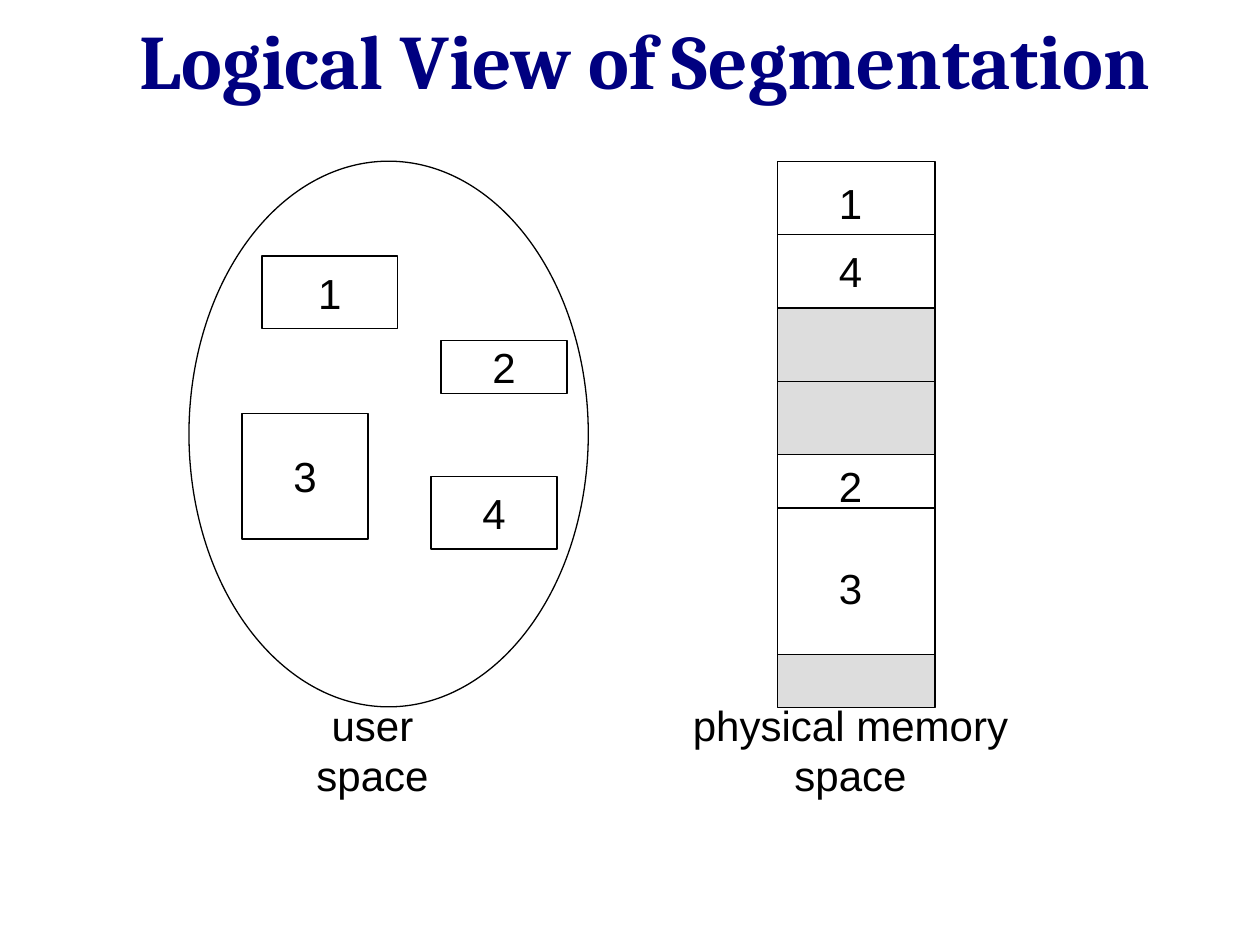
"""Build the slide on the logical view of segmentation."""
from lxml import etree
from pptx import Presentation, util as u
from pptx.dml.color import RGBColor
from pptx.enum import shapes, text
from pptx.oxml.ns import qn

TITLE = "Logical View of Segmentation"
TITLE_FONT = dict(name="Cambria", size=u.Pt(44), bold=True)
BODY_FONT = dict(name="Arial", size=u.Pt(24))
BLACK, WHITE, GRAY, NAVY = "000000", "FFFFFF", "DDDDDD", "000080"

USER_SPACE = (3.81, 3.25, 8.05, 11)
SEGMENTS = [
    ("1", (5.28, 5.16, 2.74, 1.47)),
    ("3", (4.88, 8.33, 2.54, 2.54)),
    ("2", (8.89, 6.86, 2.54, 1.07)),
    ("4", (8.69, 9.6, 2.54, 1.47)),
]
MEMORY_LEFT, MEMORY_TOP, MEMORY_WIDTH = 15.67, 3.25, 3.18
BANDS = [
    dict(height=2.96, fill=WHITE, divider=1.48, numbers=[("1", 0.84), ("4", 2.21)]),
    dict(height=2.96, fill=GRAY, divider=1.48, numbers=[]),
    dict(height=4.02, fill=WHITE, divider=1.07, numbers=[("2", 0.63), ("3", 2.67)]),
    dict(height=1.07, fill=GRAY, divider=None, numbers=[]),
]
NUMBER_CENTER, NUMBER_WIDTH, LINE_HEIGHT = 17.15, 0.86, 1.02
CAPTIONS = [
    ("user\vspace", (5.59, 14.1, 3.84, 2.03)),
    ("physical memory\vspace", (13.54, 14.1, 7.21, 2.03)),
]


def rgb(value):
    return RGBColor.from_string(value)


def place(box):
    return [u.Cm(length) for length in box]


def write(shape, words, font=BODY_FONT, color=BLACK, wrap=False):
    frame = shape.text_frame
    frame.text = words
    settings = dict(word_wrap=wrap, auto_size=text.MSO_AUTO_SIZE.NONE,
                    vertical_anchor=text.MSO_ANCHOR.MIDDLE)
    for key, value in settings.items():
        setattr(frame, key, value)
    paragraph = frame.paragraphs[0]
    paragraph.alignment = text.PP_ALIGN.CENTER
    for run in paragraph.runs:
        for key, value in font.items():
            setattr(run.font, key, value)
        run.font.color.rgb = rgb(color)


def outline(shape):
    shape.line.color.rgb = rgb(BLACK)
    shape.line.width = u.Pt(0.75)


def add_outlined(parent, kind, box, fill=WHITE):
    shape = parent.add_shape(kind, *place(box))
    shape.shadow.inherit = False
    shape.fill.solid()
    shape.fill.fore_color.rgb = rgb(fill)
    outline(shape)
    return shape


def add_label(parent, words, box):
    write(parent.add_textbox(*place(box)), words)


def add_divider(parent, band, y, at_middle):
    right = MEMORY_LEFT + MEMORY_WIDTH
    divider = parent.add_connector(shapes.MSO_CONNECTOR.STRAIGHT,
                                   *place((MEMORY_LEFT, y, right, y)))
    outline(divider)
    etree.SubElement(divider._element.spPr, qn("a:effectLst"))
    if at_middle:
        divider.begin_connect(band, 1)
        divider.end_connect(band, 3)


def add_memory(parent):
    top = MEMORY_TOP
    for band in BANDS:
        height, offset = band["height"], band["divider"]
        block = add_outlined(parent, shapes.MSO_SHAPE.RECTANGLE,
                             (MEMORY_LEFT, top, MEMORY_WIDTH, height), band["fill"])
        if offset:
            add_divider(parent, block, top + offset, offset * 2 == height)
        for number, center in band["numbers"]:
            add_label(parent, number, (NUMBER_CENTER - NUMBER_WIDTH / 2,
                                       top + center - LINE_HEIGHT / 2,
                                       NUMBER_WIDTH, LINE_HEIGHT))
        top += height


def main():
    deck = Presentation()
    deck.slide_width, deck.slide_height = u.Cm(25.4), u.Cm(19.05)
    slide = deck.slides.add_slide(deck.slide_layouts.get_by_name("Title Only"))
    title = slide.shapes.title
    title.left, title.top, title.width, title.height = place((0.84, 0.38, 24.33, 1.6))
    write(title, TITLE, TITLE_FONT, NAVY, wrap=True)

    add_outlined(slide.shapes, shapes.MSO_SHAPE.OVAL, USER_SPACE)
    for number, box in SEGMENTS:
        write(add_outlined(slide.shapes, shapes.MSO_SHAPE.RECTANGLE, box), number)
    add_memory(slide.shapes.add_group_shape().shapes)
    for caption, box in CAPTIONS:
        add_label(slide.shapes, caption, box)
    deck.save("out.pptx")


if __name__ == "__main__":
    main()
